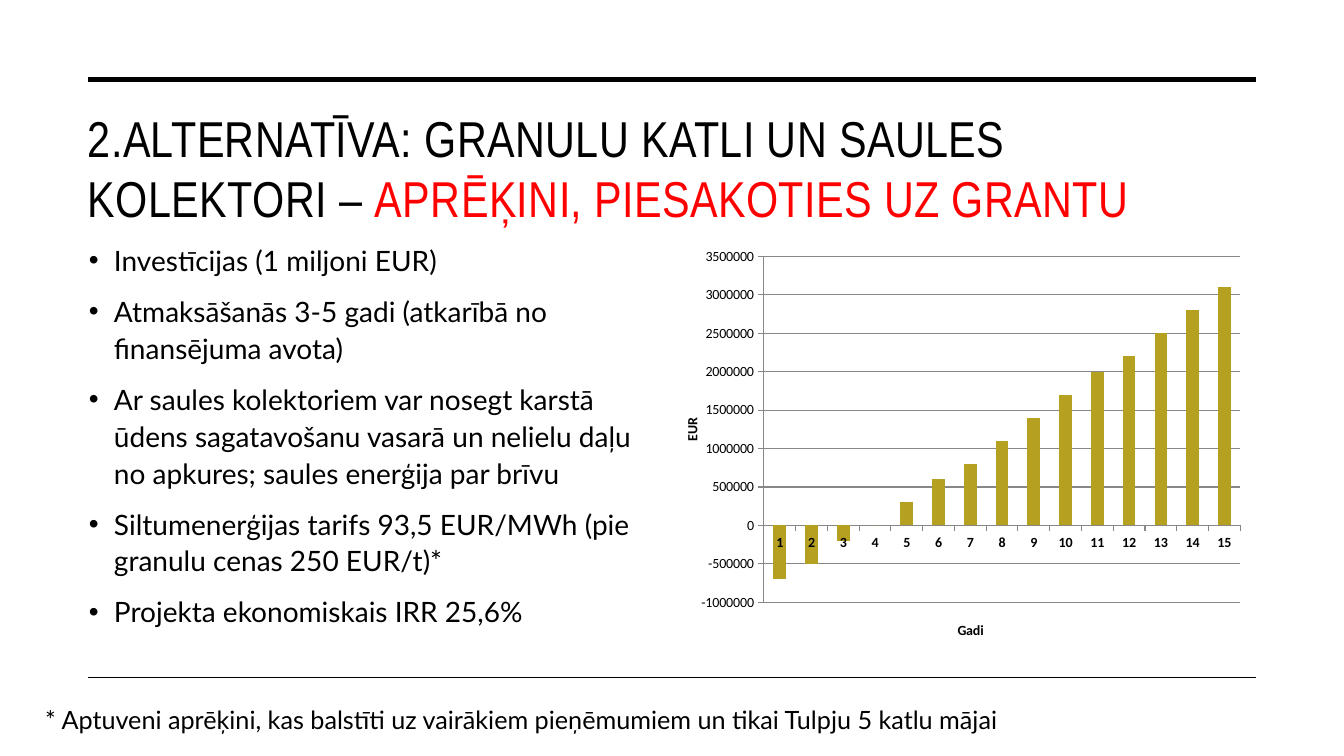
from lxml import etree
from pptx import Presentation
from pptx.chart.data import CategoryChartData
from pptx.dml.color import RGBColor
from pptx.enum.chart import XL_CHART_TYPE, XL_TICK_MARK
from pptx.enum.shapes import MSO_CONNECTOR
from pptx.enum.text import MSO_ANCHOR, MSO_AUTO_SIZE, PP_ALIGN
from pptx.oxml.ns import qn
from pptx.util import Inches, Pt

COLUMN_CLUSTERED = XL_CHART_TYPE.COLUMN_CLUSTERED
TICK_OUT, TICK_NONE = XL_TICK_MARK.OUTSIDE, XL_TICK_MARK.NONE
STRAIGHT = MSO_CONNECTOR.STRAIGHT
TOP = MSO_ANCHOR.TOP
LEFT = PP_ALIGN.LEFT
NO_FIT, GROW = MSO_AUTO_SIZE.NONE, MSO_AUTO_SIZE.SHAPE_TO_FIT_TEXT

BLACK = RGBColor(0, 0, 0)
RED = RGBColor(0xFF, 0, 0)
OLIVE = RGBColor(0xB5, 0xA0, 0x20)
GRAY = RGBColor(0x87, 0x87, 0x87)

# Grid of 96 columns by 54 rows
WIDTH, HEIGHT = Inches(13.33), Inches(7.5)
COLUMN, ROW = WIDTH / 96, HEIGHT / 54
RULE_LEFT, RULE_RIGHT = 6.3, 89.71
CONTENT_TOP, CONTENT_ROWS = 16.78, 30.24

HEADING = [("2.ALTERNATĪVA: GRANULU KATLI UN SAULES KOLEKTORI – ", BLACK),
           ("APRĒĶINI, PIESAKOTIES UZ GRANTU", RED)]
POINTS = [
    "Investīcijas (1 miljoni EUR)",
    "Atmaksāšanās 3-5 gadi (atkarībā no finansējuma avota)",
    "Ar saules kolektoriem var nosegt karstā ūdens sagatavošanu vasarā "
    "un nelielu daļu no apkures; saules enerģija par brīvu",
    "Siltumenerģijas tarifs 93,5 EUR/MWh (pie granulu cenas 250 EUR/t)*",
    "Projekta ekonomiskais IRR 25,6%",
]
FOOTNOTE = ("* Aptuveni aprēķini, kas balstīti uz vairākiem pieņēmumiem "
            "un tikai Tulpju 5 katlu mājai")
CASH_FLOW = [-700000, -500000, -200000, 0, 300000, 600000, 800000, 1100000,
             1400000, 1700000, 2000000, 2200000, 2500000, 2800000, 3100000]


def cells(left, top, columns, rows):
    return (round(left * COLUMN), round(top * ROW),
            round(columns * COLUMN), round(rows * ROW))


def style(font, name, size, color=BLACK, bold=False):
    font.name, font.size, font.bold = name, Pt(size), bold
    font.color.rgb = color


def move(placeholder, area):
    placeholder.left, placeholder.top, placeholder.width, placeholder.height = area
    frame = placeholder.text_frame
    frame.word_wrap, frame.auto_size = True, NO_FIT
    frame.vertical_anchor = TOP
    return frame


def add_rule(slide, row, weight):
    left, y, width, _ = cells(RULE_LEFT, row, RULE_RIGHT - RULE_LEFT, 0)
    rule = slide.shapes.add_connector(STRAIGHT, left, y, left + width, y)
    rule.line.color.rgb = BLACK
    rule.line.width = Pt(weight)
    etree.SubElement(rule._element.spPr, qn("a:effectLst"))


def fill_title(title):
    heading = move(title, cells(5.55, 7.27, 84.17, 8.86)).paragraphs[0]
    heading.alignment = LEFT
    for words, color in HEADING:
        part = heading.add_run()
        part.text = words
        style(part.font, "Arial Narrow", 36, color)
        part.font._element.set("spc", "30")


def fill_points(body):
    frame = move(body, cells(5.62, CONTENT_TOP, 41.76, CONTENT_ROWS))
    frame.text = "\n".join(POINTS)
    for point in frame.paragraphs:
        point.line_spacing = 1.1
        point.space_before = Pt(10)
        indents = point._p.get_or_add_pPr()
        indents.set("marL", str(Inches(0.25)))
        indents.set("indent", str(-Inches(0.25)))
        etree.SubElement(indents, qn("a:buChar")).set("char", "•")
        style(point.runs[0].font, "Lato", 20)


def add_footnote(slide):
    frame = slide.shapes.add_textbox(*cells(2.52, 49.97, 69.98, 2.88)).text_frame
    frame.word_wrap, frame.auto_size = False, GROW
    frame.text = FOOTNOTE
    style(frame.paragraphs[0].runs[0].font, "Lato", 18)


def place(part, index, **percents):
    """Set a manual layout, in percents of the chart's size."""
    for old in part.findall(qn("c:layout")):
        part.remove(old)
    layout = etree.Element(qn("c:layout"))
    manual = etree.SubElement(layout, qn("c:manualLayout"))
    if "w" in percents:
        etree.SubElement(manual, qn("c:layoutTarget")).set("val", "inner")
    for mode in ("xMode", "yMode"):
        etree.SubElement(manual, qn("c:" + mode)).set("val", "edge")
    for name, percent in percents.items():
        etree.SubElement(manual, qn("c:" + name)).set("val", f"{percent / 100:.3f}")
    part.insert(index, layout)


def format_axis(axis, name, x, y, bold):
    axis.major_tick_mark, axis.minor_tick_mark = TICK_OUT, TICK_NONE
    axis.format.line.color.rgb = GRAY
    style(axis.tick_labels.font, "Calibri", 10, bold=bold)
    frame = axis.axis_title.text_frame
    frame.text = name
    style(frame.paragraphs[0].runs[0].font, "Calibri", 10, bold=True)
    place(axis.axis_title._element, 1, x=x, y=y)
    return frame


def add_cash_flow_chart(slide):
    data = CategoryChartData()
    data.categories = [str(year) for year in range(1, len(CASH_FLOW) + 1)]
    data.add_series("Series 1", CASH_FLOW)
    area = cells(48.6, CONTENT_TOP, 41.11, CONTENT_ROWS)
    chart = slide.shapes.add_chart(COLUMN_CLUSTERED, *area, data).chart
    style(chart.font, "Calibri", 10)
    chart.has_legend = chart.has_title = False

    # Columns
    plot = chart.plots[0]
    plot.gap_width, plot.vary_by_categories = 150, False
    columns = plot.series[0]
    columns.invert_if_negative = False
    columns.format.fill.solid()
    columns.format.fill.fore_color.rgb = OLIVE

    # Axes
    years, euros = chart.category_axis, chart.value_axis
    format_axis(years, "Gadi", 47.7, 90.7, bold=True)
    euro_title = format_axis(euros, "EUR", 0, 42.7, bold=False)
    euro_title._txBody.bodyPr.set("rot", "-5400000")
    euros.minimum_scale, euros.maximum_scale = -1000000, 3500000
    euros.major_unit = 500000
    euros.tick_labels.number_format = "0"
    euros.tick_labels.number_format_is_linked = False
    euros.has_major_gridlines = True
    euros.major_gridlines.format.line.color.rgb = GRAY
    plot_area = chart._chartSpace.chart.plotArea
    place(plot_area, 0, x=14.5, y=5.1, w=82.8, h=81.7)


def main():
    deck = Presentation()
    deck.slide_width, deck.slide_height = WIDTH, HEIGHT
    slide = deck.slides.add_slide(deck.slide_layouts[1])

    # Rules above and below the content
    add_rule(slide, 5.69, 3.5)
    add_rule(slide, 48.38, 1)

    # Text and chart
    fill_title(slide.shapes.title)
    fill_points(slide.placeholders[1])
    add_footnote(slide)
    add_cash_flow_chart(slide)

    deck.save("out.pptx")


if __name__ == "__main__":
    main()
